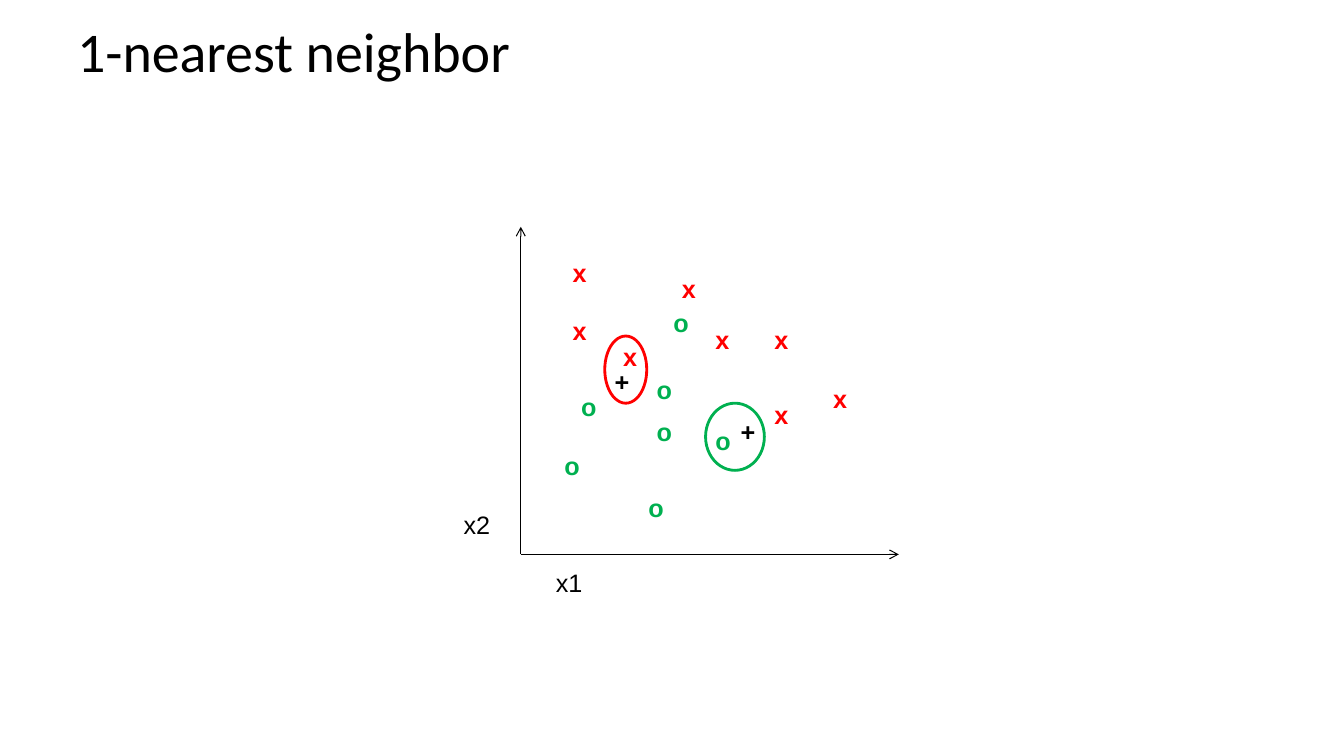
from dataclasses import dataclass

from lxml.etree import SubElement
from pptx import Presentation
from pptx.dml.color import RGBColor as RGB
from pptx.enum.shapes import MSO_CONNECTOR as Connector, MSO_SHAPE as Shape
from pptx.enum.text import MSO_ANCHOR as Anchor, MSO_AUTO_SIZE as AutoSize
from pptx.oxml.ns import qn
from pptx.util import Inches, Pt


@dataclass(frozen=True)
class Theme:
    ink: RGB = RGB(0, 0, 0)
    red: RGB = RGB(0xFF, 0, 0)
    green: RGB = RGB(0, 0xB0, 0x50)
    title_font: str = "Calibri"
    body_font: str = "Arial"
    title_size: int = 40
    body_size: int = 18
    axis_width: float = 0.75
    ring_width: float = 2


THEME = Theme()
COLUMNS, ROWS = 160, 90
CELL = Inches(1) / 12  # one grid step, the same across and down

# Grid places (column, row) of each mark's box
CROSSES = [(84, 38), (91, 38), (91, 47), (98, 45),
           (67, 30), (67, 37), (80, 32), (73, 40)]
CIRCLES = [(79, 36), (84, 50), (66, 53), (68, 46),
           (76, 58), (77, 49), (77, 44)]
QUERIES = [(72, 43), (87, 49)]
ORIGIN, X1_END, X2_END = (62, 66), (107, 66), (62, 27)


def grid(*steps):
    return [round(step * CELL) for step in steps]


def add_text(slide, text, column, row, width, height=4.8, *,
             color=THEME.ink, font=THEME.body_font, size=THEME.body_size,
             bold=False, wrap=False, anchor=Anchor.TOP):
    box = slide.shapes.add_textbox(*grid(column, row, width, height))
    frame = box.text_frame
    frame.word_wrap = wrap
    frame.auto_size = AutoSize.NONE if wrap else AutoSize.SHAPE_TO_FIT_TEXT
    frame.vertical_anchor = anchor
    run = frame.paragraphs[0].add_run()
    run.text = text
    run.font.name = font
    run.font.size = Pt(size)
    run.font.bold = bold
    run.font.color.rgb = color


def add_marks(slide, symbol, places, width, color):
    for column, row in places:
        add_text(slide, symbol, column, row, width, color=color, bold=True)


def add_axis(slide, start, end):
    axis = slide.shapes.add_connector(Connector.STRAIGHT, *grid(*start, *end))
    axis.line.color.rgb = THEME.ink
    axis.line.width = Pt(THEME.axis_width)
    SubElement(axis.line._get_or_add_ln(), qn("a:tailEnd"), type="arrow")
    SubElement(axis._element.spPr, qn("a:effectLst"))


def add_ring(slide, column, row, width, height, color):
    ring = slide.shapes.add_shape(Shape.OVAL, *grid(column, row, width, height))
    ring.shadow.inherit = False
    ring.fill.background()
    ring.line.color.rgb = color
    ring.line.width = Pt(THEME.ring_width)


def main():
    deck = Presentation()
    deck.slide_width, deck.slide_height = grid(COLUMNS, ROWS)
    slide = deck.slides.add_slide(deck.slide_layouts[6])

    # Title
    add_text(slide, "1-nearest neighbor", 8, 0, 144, 12, wrap=True,
             font=THEME.title_font, size=THEME.title_size, anchor=Anchor.MIDDLE)

    # Labelled samples of the two classes
    add_marks(slide, "x", CROSSES, 4.1, THEME.red)
    add_marks(slide, "o", CIRCLES, 4.3, THEME.green)

    # Axes and their names
    add_axis(slide, ORIGIN, X2_END)
    add_axis(slide, ORIGIN, X1_END)
    add_text(slide, "x2", 54, 60, 5.6)
    add_text(slide, "x1", 65, 67, 5.6)

    # Query points, each ringed with its nearest neighbor
    add_marks(slide, "+", QUERIES, 4.2, THEME.ink)
    add_ring(slide, 72, 40, 5, 8, THEME.red)
    add_ring(slide, 84, 48, 7, 8, THEME.green)

    deck.save("out.pptx")


if __name__ == "__main__":
    main()
